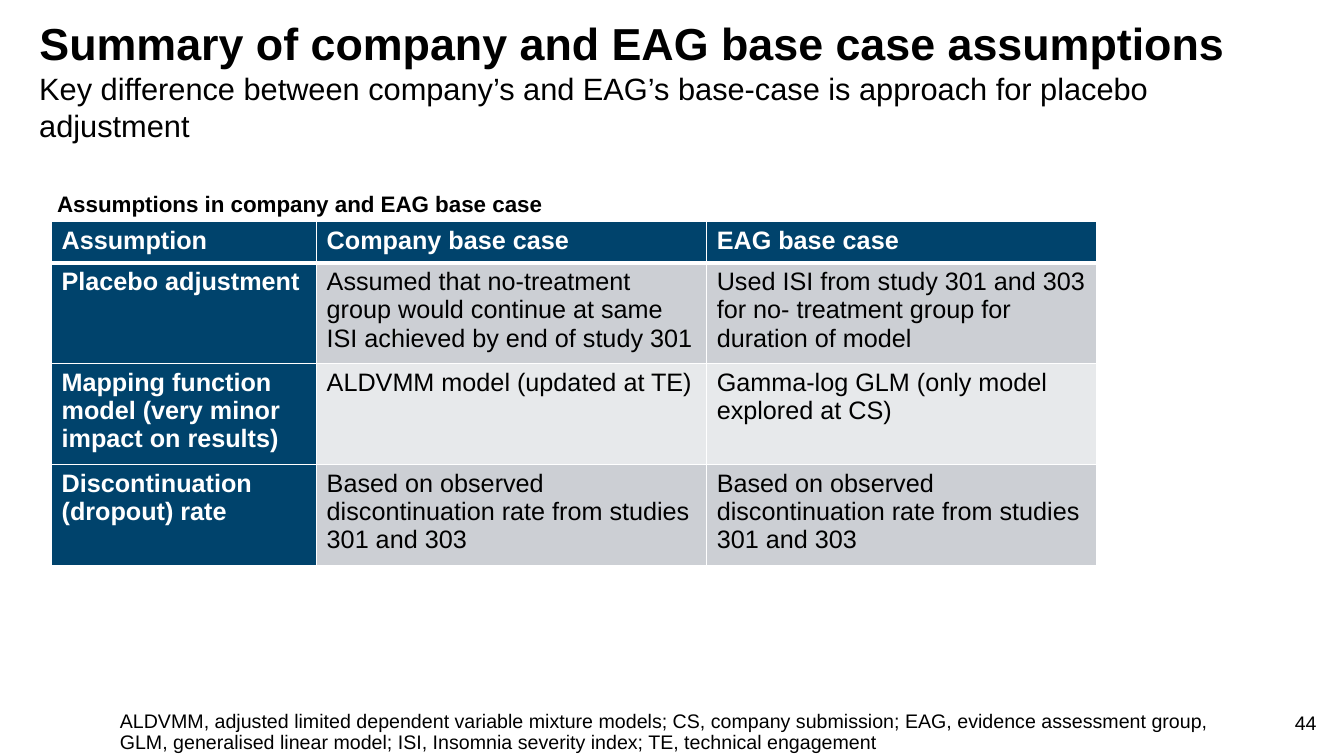
from lxml import etree
from pptx import Presentation
from pptx.dml.color import RGBColor
from pptx.enum.text import MSO_ANCHOR, MSO_AUTO_SIZE, PP_ALIGN
from pptx.oxml.ns import qn
from pptx.util import Cm, Pt

LEFT, RIGHT = PP_ALIGN.LEFT, PP_ALIGN.RIGHT
TOP, MIDDLE = MSO_ANCHOR.TOP, MSO_ANCHOR.MIDDLE
NO_AUTO_SIZE = MSO_AUTO_SIZE.NONE
TITLE_ONLY = 5

FONT = "Arial"
BLACK, WHITE, NAVY = "000000", "FFFFFF", "00436C"
BAND_FILLS = ["CCCFD4", "E7E9EB"]

COLUMN_WIDTHS = [6.68, 9.83, 9.83]
HEADER_HEIGHT, ROW_HEIGHT = 1.03, 2.54
ASSUMPTIONS = [
    ["Assumption", "Company base case", "EAG base case"],
    [
        "Placebo adjustment",
        "Assumed that no-treatment group would continue at same ISI achieved by end of study 301",
        "Used ISI from study 301 and 303 for no- treatment group for duration of model",
    ],
    [
        "Mapping function model (very minor impact on results)",
        "ALDVMM model (updated at TE)",
        "Gamma-log GLM (only model explored at CS)",
    ],
    [
        "Discontinuation (dropout) rate",
        "Based on observed discontinuation rate from studies 301 and 303",
        "Based on observed discontinuation rate from studies 301 and 303",
    ],
]


def color(value):
    return RGBColor.from_string(value)


def write(text_frame, text, size, bold=False, text_color=BLACK, align=LEFT, spacing=1.0):
    paragraph = text_frame.paragraphs[0]
    paragraph.alignment = align
    paragraph.line_spacing = spacing
    run = paragraph.add_run()
    run.text = text
    run.font.name = FONT
    run.font.size = Pt(size)
    run.font.bold = bold
    run.font.color.rgb = color(text_color)


def add_title(slide, box, text):
    title = slide.shapes.title
    title.left, title.top, title.width, title.height = map(Cm, box)
    text_frame = title.text_frame
    text_frame.auto_size = NO_AUTO_SIZE
    text_frame.vertical_anchor = MIDDLE
    write(text_frame, text, 32, bold=True, spacing=0.9)


def add_text(slide, box, text, size, wrap=True, **style):
    text_frame = slide.shapes.add_textbox(*map(Cm, box)).text_frame
    text_frame.word_wrap = wrap
    text_frame.vertical_anchor = TOP
    write(text_frame, text, size, **style)


def set_borders(cell, bottom_width):
    properties = cell._tc.get_or_add_tcPr()
    widths = {"a:lnL": 1, "a:lnR": 1, "a:lnT": 1, "a:lnB": bottom_width}
    for side, width in widths.items():
        line = etree.SubElement(properties, qn(side), w=str(Pt(width)))
        fill = etree.SubElement(line, qn("a:solidFill"))
        etree.SubElement(fill, qn("a:srgbClr"), val=WHITE)


def add_assumptions_table(slide, left, top):
    width = sum(COLUMN_WIDTHS)
    heights = [HEADER_HEIGHT] + [ROW_HEIGHT] * (len(ASSUMPTIONS) - 1)
    box = left, top, width, sum(heights)
    table = slide.shapes.add_table(
        len(ASSUMPTIONS), len(COLUMN_WIDTHS), *map(Cm, box)
    ).table
    for column, column_width in zip(table.columns, COLUMN_WIDTHS):
        column.width = Cm(column_width)
    for row_index, (row, height) in enumerate(zip(table.rows, heights)):
        row.height = Cm(height)
        for column_index, cell in enumerate(row.cells):
            is_heading = row_index == 0 or column_index == 0
            set_borders(cell, 3 if row_index == 0 else 1)
            cell.fill.solid()
            band = BAND_FILLS[(row_index - 1) % 2]
            cell.fill.fore_color.rgb = color(NAVY if is_heading else band)
            write(
                cell.text_frame,
                ASSUMPTIONS[row_index][column_index],
                18,
                bold=is_heading,
                text_color=WHITE if is_heading else BLACK,
            )


def add_footer(slide, left, top):
    add_text(
        slide,
        (left, top, 28.91, 1.02),
        "ALDVMM, adjusted limited dependent variable mixture models; "
        "CS, company submission; EAG, evidence assessment group, "
        "GLM, generalised linear model; ISI, Insomnia severity index; "
        "TE, technical engagement",
        14,
        spacing=0.9,
    )
    add_text(slide, (left + 29.36, top, 1.3, 1.02), "44", 14, align=RIGHT)


def build_assumptions_slide(presentation):
    slide = presentation.slides.add_slide(presentation.slide_layouts[TITLE_ONLY])
    add_title(
        slide, (0.74, 0.33, 31.24, 1.65), "Summary of company and EAG base case assumptions"
    )
    add_text(
        slide,
        (0.74, 1.63, 31.24, 2.13),
        "Key difference between company’s and EAG’s base-case is approach for placebo adjustment",
        22,
    )
    add_text(
        slide,
        (1.19, 4.67, 12.9, 0.94),
        "Assumptions in company and EAG base case",
        16,
        wrap=False,
        bold=True,
    )
    add_assumptions_table(slide, 1.3, 5.59)
    add_footer(slide, 2.77, 17.8)


def main():
    presentation = Presentation()
    presentation.slide_width = Cm(33.87)
    presentation.slide_height = Cm(19.05)
    build_assumptions_slide(presentation)
    presentation.save("out.pptx")


if __name__ == "__main__":
    main()
